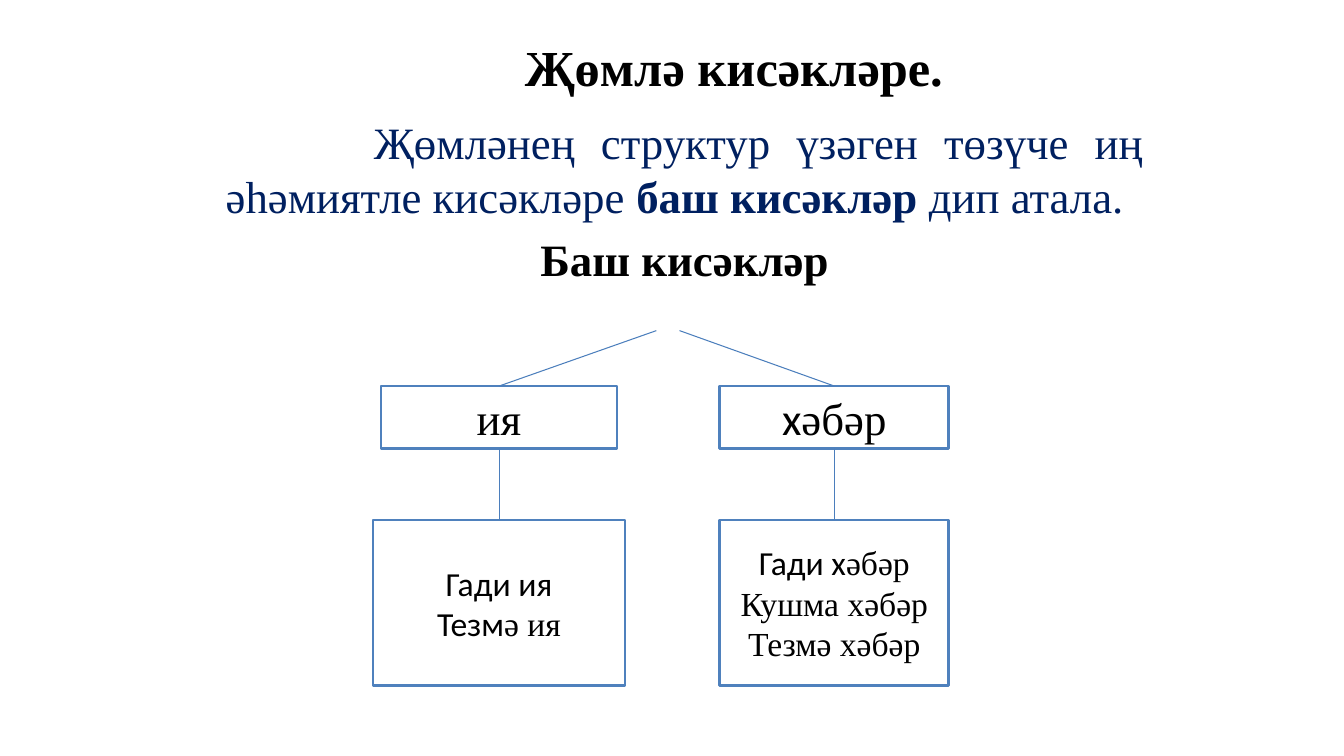
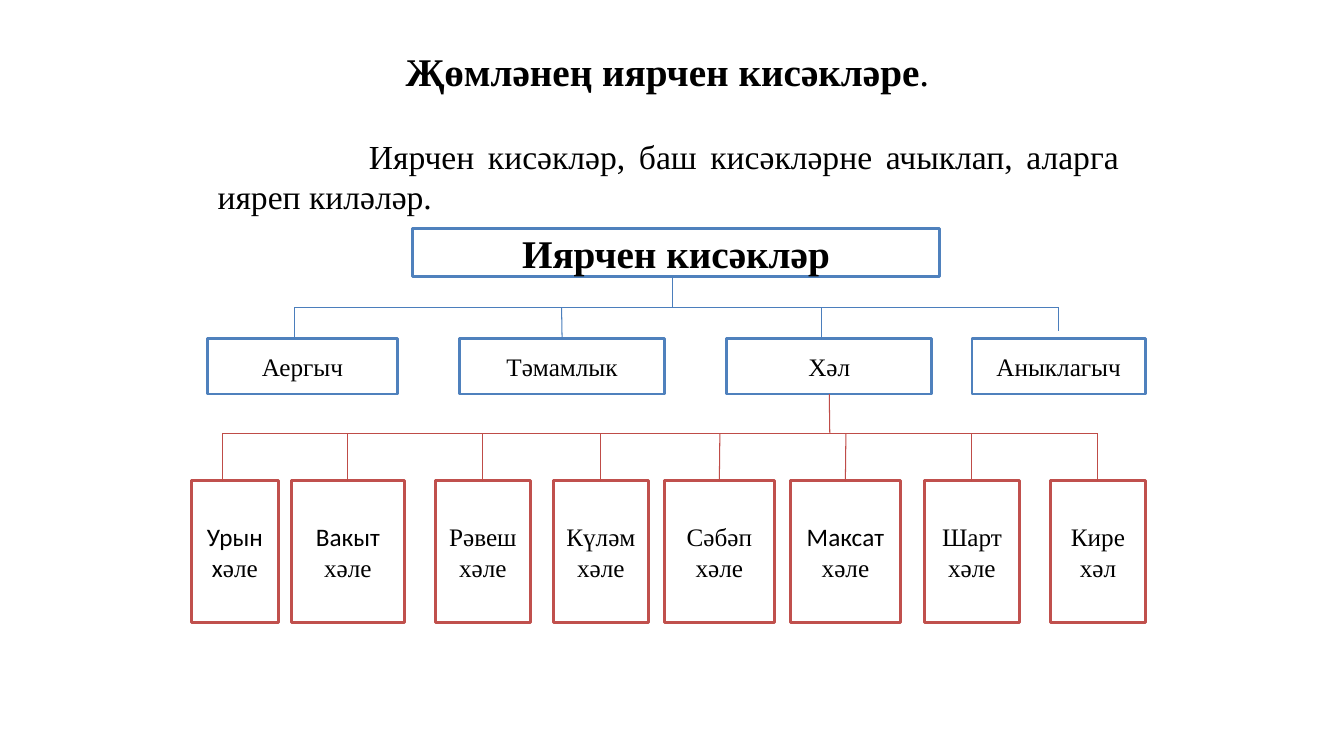
"""Two slides in Tatar on the principal and secondary parts of a sentence."""
from lxml import etree
from pptx import Presentation
from pptx.dml.color import RGBColor
from pptx.enum.shapes import MSO_CONNECTOR as LINE, MSO_SHAPE as SHAPE
from pptx.enum.text import MSO_ANCHOR as ANCHOR, MSO_AUTO_SIZE as FIT, PP_ALIGN as ALIGN
from pptx.oxml.ns import qn
from pptx.util import Inches, Pt

COLORS = {
    "black": "000000", "white": "FFFFFF", "navy": "002060",
    "blue": "4F81BD", "blue_line": "4B7EBC",
    "red": "C0504D", "red_line": "BF4C48",
}
SERIF, SANS = "Times New Roman", "Calibri"
TOP, BOTTOM = 0, 2


def write(para, runs, size, color="black", align=ALIGN.CENTER):
    """Fill a paragraph from (text, font, bold) runs."""
    para.alignment = align
    for text, font, bold in runs:
        span = para.add_run()
        span.text = text
        span.font.name = font
        span.font.size = Pt(size)
        span.font.bold = bold
        span.font.color.rgb = RGBColor.from_string(COLORS[color])


def link(page, color, start, end, upper=None, lower=None):
    """Draw a thin line, joined to the boxes above and below when given."""
    line = page.shapes.add_connector(LINE.STRAIGHT, *[Inches(n) for n in start + end])
    line.line.color.rgb = RGBColor.from_string(COLORS[color])
    line.line.width = Pt(0.75)
    etree.SubElement(line._element.spPr, qn("a:effectLst"))
    if upper is not None:
        line.begin_connect(upper, BOTTOM)
    if lower is not None:
        line.end_connect(lower, TOP)


deck = Presentation()
deck.slide_width, deck.slide_height = Inches(13.33), Inches(7.5)
principal, secondary = [deck.slides.add_slide(deck.slide_layouts[5]) for _ in range(2)]

titles = [
    (principal, (3.23, 0.39, 8.1, 0.54), 36, [("Җөмлә кисәкләре.", SERIF, True)]),
    (secondary, (2.37, 0.31, 8.5, 0.78), 28,
     [("Җөмләнең иярчен кисәкләре", SERIF, True), (".", SERIF, False)]),
]
for page, area, size, runs in titles:
    title = page.shapes.title
    title.left, title.top, title.width, title.height = [Inches(n) for n in area]
    title.text_frame.auto_size = FIT.NONE
    title.text_frame.vertical_anchor = ANCHOR.MIDDLE
    write(title.text_frame.paragraphs[0], runs, size)

definitions = [
    (principal, (2.14, 1.09, 9.3, 1.9), 32, [
        (ALIGN.JUSTIFY, 1.47, "navy", [
            ("Җөмләнең структур үзәген төзүче иң әһәмиятле кисәкләре ", SERIF, False),
            ("баш кисәкләр", SERIF, True),
            (" дип атала.", SERIF, False)]),
        (ALIGN.CENTER, 0, "black", [("Баш кисәкләр", SERIF, True)]),
    ]),
    (secondary, (2.06, 1.3, 9.14, 0.95), 24, [
        (ALIGN.JUSTIFY, 1.5, "black", [
            ("Иярчен кисәкләр, баш кисәкләрне ачыклап, аларга ияреп киләләр.", SERIF, False)]),
    ]),
]
for page, area, size, paragraphs in definitions:
    frame = page.shapes.add_textbox(*[Inches(n) for n in area]).text_frame
    frame.word_wrap = True
    for number, (align, indent, color, runs) in enumerate(paragraphs):
        para = frame.add_paragraph() if number else frame.paragraphs[0]
        write(para, runs, size, color, align)
        para.space_before = Pt(size * 0.2)
        para._p.get_or_add_pPr().set("indent", str(Inches(indent)))

kinds = [
    ("Аергыч", 2.06, 1.88, 2.92, 3.36),
    ("Тәмамлык", 4.56, 2.03, 5.57, 3.36),
    ("Хәл", 7.21, 2.03, 8.15, 3.36),
    ("Аныклагыч", 9.64, 1.72, 10.5, 3.28),
]
adverbials = [
    ("Урын", SANS, 1.9, 0.86, 2.21),
    ("Вакыт", SANS, 2.89, 1.12, 3.45),
    ("Рәвеш", SERIF, 4.32, 0.94, 4.79),
    ("Күләм", SERIF, 5.49, 0.94, 5.96),
    ("Сәбәп", SERIF, 6.59, 1.09, 7.14),
    ("Максат", SANS, 7.84, 1.09, 8.39),
    ("Шарт", SERIF, 9.17, 0.94, 9.64),
    ("Кире", SERIF, 10.42, 0.94, 10.89),
]
endings = {
    "Урын": [("х", SANS, False), ("әле", SERIF, False)],
    "Кире": [("хәл", SERIF, False)],
}
boxes = [
    ("subject", principal, (3.78, 3.83, 2.34, 0.62), "blue", 32, [[("ия", SERIF, False)]]),
    ("predicate", principal, (7.14, 3.83, 2.27, 0.62), "blue", 32,
     [[("х", SANS, False), ("әбәр", SERIF, False)]]),
    ("subject kinds", principal, (3.7, 5.16, 2.5, 1.64), "blue", 24,
     [[("Гади ия", SANS, False)], [("Тезм", SANS, False), ("ә ия", SERIF, False)]]),
    ("predicate kinds", principal, (7.14, 5.16, 2.27, 1.64), "blue", 24,
     [[("Гади х", SANS, False), ("әбәр", SERIF, False)],
      [("Кушма хәбәр", SERIF, False)], [("Тезмә хәбәр", SERIF, False)]]),
    ("root", secondary, (4.09, 2.27, 5.23, 0.47), "blue", 28,
     [[("Иярчен кисәкләр", SERIF, True)]]),
]
for name, left, width, drop, drop_end in kinds:
    boxes.append((name, secondary, (left, 3.36, width, 0.55), "blue", 18, [[(name, SERIF, False)]]))
for name, font, left, width, drop in adverbials:
    ending = endings.get(name, [("хәле", SERIF, False)])
    boxes.append((name, secondary, (left, 4.77, width, 1.41), "red", 18,
                  [[(name, font, False)], ending]))

drawn = {}
for name, page, area, color, size, lines in boxes:
    box = page.shapes.add_shape(SHAPE.RECTANGLE, *[Inches(n) for n in area])
    box.shadow.inherit = False
    box.fill.solid()
    box.fill.fore_color.rgb = RGBColor.from_string(COLORS["white"])
    box.line.color.rgb = RGBColor.from_string(COLORS[color])
    box.line.width = Pt(2)
    box.text_frame.word_wrap = True
    box.text_frame.vertical_anchor = ANCHOR.MIDDLE
    for number, runs in enumerate(lines):
        para = box.text_frame.add_paragraph() if number else box.text_frame.paragraphs[0]
        write(para, runs, size)
    drawn[name] = box

for name, fork, middle in [("subject", 6.51, 4.95), ("predicate", 6.74, 8.27)]:
    part, part_kinds = drawn[name], drawn[name + " kinds"]
    link(principal, "blue_line", (middle, 4.45), (middle, 5.16), part, part_kinds)
    link(principal, "blue_line", (fork, 3.28), (middle, 3.83), lower=part)

drops = [(name, drop, drop_end) for name, left, width, drop, drop_end in kinds]
leaf_drops = [(name, drop, 4.77) for name, font, left, width, drop in adverbials]
tiers = [
    ("blue_line", 6.67, 2.74, 3.05, None, drops),
    ("red_line", 8.23, 3.91, 4.3, drawn["Хәл"], leaf_drops),
]
for color, stem, stem_top, rail, parent, branches in tiers:
    link(secondary, color, (stem, stem_top), (stem, rail), parent)
    link(secondary, color, (branches[0][1], rail), (branches[-1][1], rail))
    for name, drop, drop_end in branches:
        box = drawn[name]
        centred = abs(box.left + box.width / 2 - Inches(drop)) < Inches(0.02)
        touching = abs(box.top - Inches(drop_end)) < Inches(0.02)
        link(secondary, color, (drop, rail), (drop, drop_end),
             lower=box if centred and touching else None)

deck.save("out.pptx")
